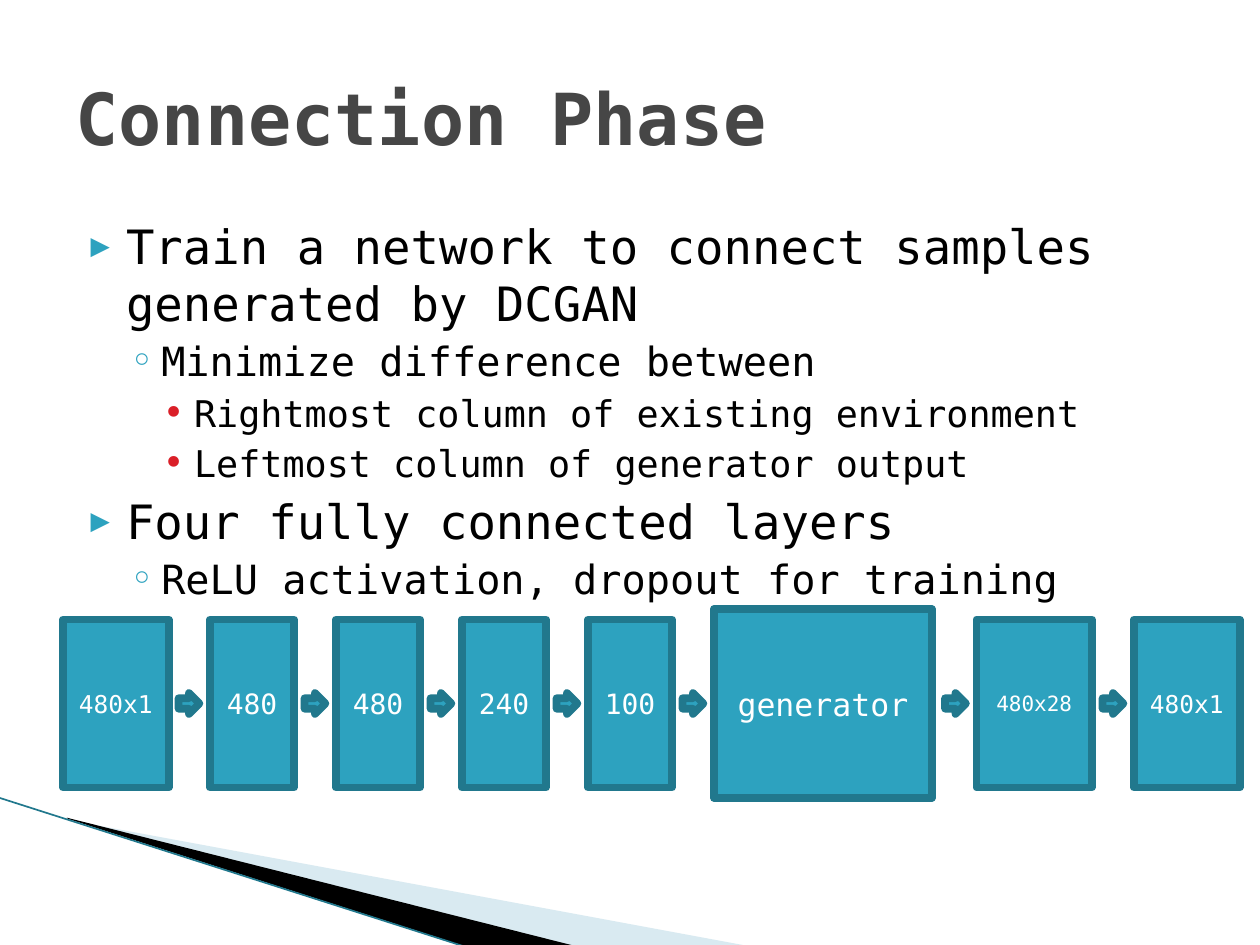
from dataclasses import dataclass

from lxml import etree
from pptx import Presentation
from pptx import util as u
from pptx.dml.color import RGBColor
from pptx.enum import shapes, text
from pptx.oxml.ns import qn

FONT = "DejaVu Sans Mono"
COLORS = {
    "teal": "2DA2BF", "dark teal": "21788D", "red": "DA1F28", "pale": "A0CBDC",
    "title": "464646", "black": "000000", "white": "FFFFFF",
}
MIDLINE = 402
ARROW_SIZE = 12
ARROW_LEAD = 18


@dataclass(frozen=True)
class Level:
    size: float
    indent: float
    hanging: float
    before: float
    bullet: str
    color: str
    bullet_percent: int = 100


@dataclass(frozen=True)
class Stage:
    label: str
    left: float
    width: float
    size: float
    height: float = 96


LEVELS = [
    Level(27, 28.8, 20.16, 4, "▶", "teal", 68),
    Level(23, 48.96, 18, 3.2, "◦", "teal"),
    Level(21, 67.68, 18, 3.5, "•", "red"),
]
POINTS = [
    (0, "Train a network to connect samples generated by DCGAN"),
    (1, "Minimize difference between"),
    (2, "Rightmost column of existing environment"),
    (2, "Leftmost column of generator output"),
    (0, "Four fully connected layers"),
    (1, "ReLU activation, dropout for training"),
]
HIDDEN_LAYERS = ["480", "480", "240", "100"]
STAGES = [
    Stage("480x1", 36, 60.5, 14),
    *[Stage(label, 120 + 72 * i, 48, 16) for i, label in enumerate(HIDDEN_LAYERS)],
    Stage("generator", 408, 124.5, 18, 108),
    Stage("480x28", 558, 66, 12),
    Stage("480x1", 648, 60.5, 14),
]


def rgb(name: str) -> RGBColor:
    return RGBColor.from_string(COLORS[name])


def write(para, words: str, size: float, color: str, bold: bool = False) -> None:
    span = para.add_run()
    span.text = words
    values = {"name": FONT, "size": u.Pt(size), "bold": bold}
    for key, value in values.items():
        setattr(span.font, key, value)
    span.font.color.rgb = rgb(color)


def place(box, left: float, top: float, width: float, height: float) -> None:
    values = {"left": left, "top": top, "width": width, "height": height}
    for key, value in values.items():
        setattr(box, key, u.Pt(value))


def add_bullet(para, level: Level) -> None:
    props = para._p.get_or_add_pPr()
    props.set("marL", str(u.Pt(level.indent)))
    props.set("indent", str(-u.Pt(level.hanging)))
    tint = etree.SubElement(props, qn("a:buClr"))
    etree.SubElement(tint, qn("a:srgbClr"), val=COLORS[level.color])
    etree.SubElement(props, qn("a:buSzPct"), val=str(level.bullet_percent * 1000))
    etree.SubElement(props, qn("a:buFont"), typeface=FONT)
    etree.SubElement(props, qn("a:buChar"), char=level.bullet)


def add_block(page, kind, left: float, width: float, height: float):
    block = page.shapes.add_shape(
        kind, u.Pt(left), u.Pt(MIDLINE - height / 2), u.Pt(width), u.Pt(height))
    block.shadow.inherit = False
    block.fill.solid()
    block.fill.fore_color.rgb = rgb("teal")
    block.line.color.rgb = rgb("dark teal")
    block.line.width = u.Pt(4.33)
    return block


def add_stage(page, stage: Stage) -> None:
    box = add_block(page, shapes.MSO_SHAPE.RECTANGLE, stage.left, stage.width, stage.height)
    box.text_frame.vertical_anchor = text.MSO_ANCHOR.MIDDLE
    para = box.text_frame.paragraphs[0]
    para.alignment = text.PP_ALIGN.CENTER
    write(para, stage.label, stage.size, "white")


def add_wedge(page, corners: list[tuple[float, float]], color: str):
    start, *rest = [(u.Pt(x), u.Pt(y)) for x, y in corners]
    builder = page.shapes.build_freeform(*start)
    builder.add_line_segments(rest, close=True)
    wedge = builder.convert_to_shape()
    wedge.shadow.inherit = False
    wedge.fill.solid()
    wedge.fill.fore_color.rgb = rgb(color)
    wedge.line.fill.background()
    return wedge


def add_corner(page) -> None:
    pale = add_wedge(
        page, [(39.6, 468.7), (428.4, 540.7), (328.3, 540.7), (39.6, 468)], "pale")
    tint = pale.fill._xPr.find(".//" + qn("a:srgbClr"))
    etree.SubElement(tint, qn("a:alpha"), val="40000")
    add_wedge(page, [(38.2, 467.3), (329, 540.7), (267.8, 541.4), (38.9, 468)], "black")
    edge = page.shapes.add_connector(
        shapes.MSO_CONNECTOR.STRAIGHT, u.Pt(-0.7), u.Pt(455.8), u.Pt(267.1), u.Pt(541.4))
    edge.line.color.rgb = rgb("dark teal")
    edge.line.width = u.Pt(0.95)
    etree.SubElement(edge._element.spPr, qn("a:effectLst"))


def fill_title(box) -> None:
    place(box, 36, 21.6, 648, 90)
    box.text_frame.auto_size = text.MSO_AUTO_SIZE.NONE
    box.text_frame.vertical_anchor = text.MSO_ANCHOR.MIDDLE
    para = box.text_frame.paragraphs[0]
    para.alignment = text.PP_ALIGN.LEFT
    write(para, "Connection Phase", 41, "title", bold=True)


def fill_body(box) -> None:
    place(box, 36, 116.64, 648, 356.4)
    frame = box.text_frame
    frame.auto_size = text.MSO_AUTO_SIZE.NONE
    frame.margin_top = u.Pt(7.6)
    for i, (depth, words) in enumerate(POINTS):
        level = LEVELS[depth]
        para = frame.add_paragraph() if i else frame.paragraphs[0]
        para.level = depth
        add_bullet(para, level)
        para.space_before = u.Pt(level.before if i else 0)
        write(para, words, level.size, "black")


def main() -> None:
    deck = Presentation()
    deck.slide_width, deck.slide_height = u.Pt(720), u.Pt(540)
    page = deck.slides.add_slide(deck.slide_layouts[1])

    # Corner decoration
    add_corner(page)

    # Title and list
    fill_title(page.shapes.title)
    fill_body(page.placeholders[1])

    # Network stages, each led into by an arrow
    for i, stage in enumerate(STAGES):
        add_stage(page, stage)
        if i:
            add_block(page, shapes.MSO_SHAPE.RIGHT_ARROW,
                      stage.left - ARROW_LEAD, ARROW_SIZE, ARROW_SIZE)

    deck.save("out.pptx")


if __name__ == "__main__":
    main()
